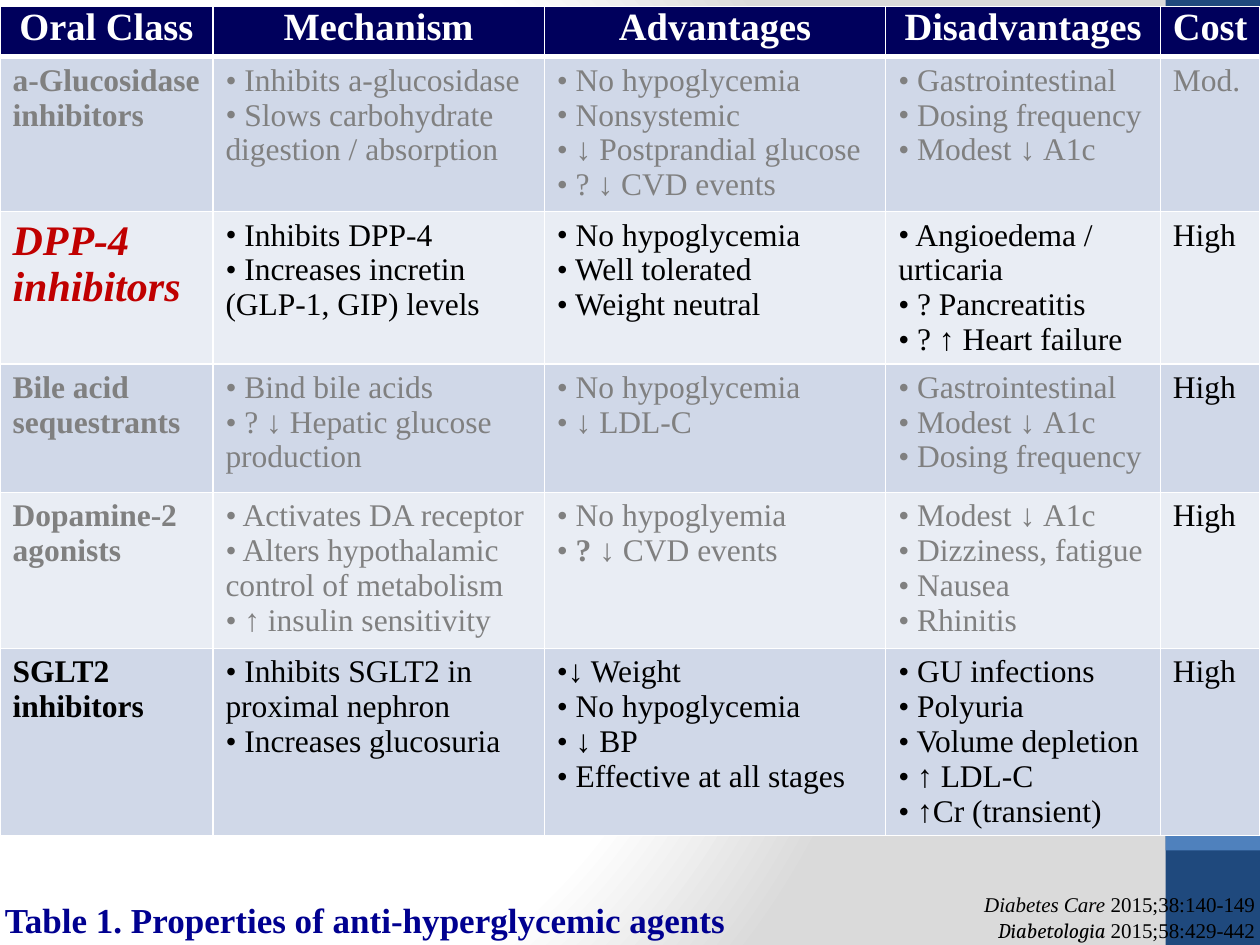
from pptx import Presentation
from pptx.dml.color import RGBColor
from pptx.enum.shapes import MSO_SHAPE as Shape
from pptx.enum.text import MSO_AUTO_SIZE as AutoSize, PP_ALIGN as Align
from pptx.oxml import parse_xml
from pptx.oxml.ns import nsdecls
from pptx.util import Inches, Pt

COLUMN_WIDTHS = [1.69, 2.63, 2.71, 2.18, 0.79]
ROW_HEIGHTS = [0.4, 1.23, 0.98, 1.02, 1.24, 1.28]
HEADINGS = ["Oral Class", "Mechanism", "Advantages", "Disadvantages", "Cost"]
GREY, BLACK, RED = "808080", "000000", "C00000"
DRUG_ROWS = [
    (GREY, GREY, [
        ["a-Glucosidase inhibitors"],
        [" Inhibits a-glucosidase", " Slows carbohydrate digestion / absorption"],
        [" No hypoglycemia", " Nonsystemic", " *↓* Postprandial glucose", " ? *↓ *CVD events"],
        [" Gastrointestinal", " Dosing frequency", " Modest *↓ *A1c"],
        ["Mod."]]),
    (BLACK, BLACK, [
        ["DPP-4", "inhibitors"],
        [" Inhibits DPP-4", " Increases incretin (GLP-1, GIP) levels"],
        [" No hypoglycemia", " Well tolerated", " Weight neutral"],
        [" Angioedema / urticaria", " ? Pancreatitis", " ? *↑ *Heart failure"],
        ["High"]]),
    (GREY, BLACK, [
        ["Bile acid sequestrants"],
        [" Bind bile acids", "* *? *↓ *Hepatic glucose production"],
        [" No hypoglycemia", " ↓ LDL-C"],
        [" Gastrointestinal", " Modest *↓ *A1c", " Dosing frequency"],
        ["High"]]),
    (GREY, BLACK, [
        ["Dopamine-2", "agonists"],
        [" Activates DA receptor", " Alters hypothalamic control of metabolism",
         " *↑ *insulin sensitivity"],
        [" No hypoglyemia", "* ? ↓ *CVD events"],
        [" Modest *↓ *A1c", " Dizziness, fatigue", " Nausea", " Rhinitis"],
        ["High"]]),
    (BLACK, BLACK, [
        ["SGLT2 inhibitors"],
        [" Inhibits SGLT2 in proximal nephron", " Increases glucosuria"],
        ["↓ Weight", " No hypoglycemia", " ↓ BP", " Effective at all stages"],
        [" GU infections", " Polyuria", " Volume depletion", " *↑ *LDL-C", "* ↑*Cr (transient)"],
        ["High"]]),
]


def rgb(value):
    """Turn a hex string into a colour."""
    return RGBColor.from_string(value)


class SlideBuilder:
    """Hold the style and the current slide."""

    font = "Times New Roman"
    bands = ["D0D8E8", "E9EDF4"]

    def __init__(self, page):
        """Keep the slide to draw on."""
        self.page = page

    def background(self):
        """Fill the slide with a circular white to grey gradient."""
        stops = "".join(
            f'<a:gs pos="{place}000"><a:srgbClr val="{color}"/></a:gs>'
            for place, color in [(0, "FFFFFF"), (75, "FFFFFF"), (100, "DADADA")])
        self.page.element.cSld.insert(0, parse_xml(
            f'<p:bg {nsdecls("p", "a")}><p:bgPr><a:gradFill rotWithShape="1">'
            f'<a:gsLst>{stops}</a:gsLst><a:path path="circle">'
            '<a:fillToRect l="20000" t="50000" r="100000" b="50000"/></a:path>'
            '</a:gradFill><a:effectLst/></p:bgPr></p:bg>'))

    def bar(self, top, height, color):
        """Add a plain block on the right edge."""
        box = self.page.shapes.add_shape(
            Shape.RECTANGLE, Inches(9.25), Inches(top), Inches(0.75), Inches(height))
        box.shadow.inherit = False
        box.fill.solid()
        box.fill.fore_color.rgb = rgb(color)
        box.line.fill.background()

    def span(self, para, text, size, color, bold=False, italic=False, font=None):
        """Add one formatted run."""
        span = para.add_run()
        span.text = text
        span.font.name = font or self.font
        span.font.size = Pt(size)
        span.font.color.rgb = rgb(color)
        span.font.bold = bold
        span.font.italic = italic

    def borders(self, cell, top, bottom):
        """Draw white cell borders with the given top and bottom widths."""
        for side, width in zip("LRTB", (1, 1, top, bottom)):
            cell._tc.get_or_add_tcPr().append(parse_xml(
                f'<a:ln{side} {nsdecls("a")} w="{Pt(width)}"><a:solidFill>'
                f'<a:srgbClr val="FFFFFF"/></a:solidFill></a:ln{side}>'))

    def cell(self, cell, fill, lines, size, color, bold=False, italic=False,
             align=None, bullet=False):
        """Fill a cell with lines; asterisks enclose bold parts."""
        cell.fill.solid()
        cell.fill.fore_color.rgb = rgb(fill)
        frame = cell.text_frame
        for index, line in enumerate(lines):
            para = frame.add_paragraph() if index else frame.paragraphs[0]
            para.alignment = align
            if bullet:
                props = para._p.get_or_add_pPr()
                props.append(parse_xml(f'<a:buFont {nsdecls("a")} typeface="{self.font}"/>'))
                props.append(parse_xml(f'<a:buChar {nsdecls("a")} char="•"/>'))
            for part, text in enumerate(line.split("*")):
                if text:
                    self.span(para, text, size, color, bold or part % 2 == 1, italic)

    def table(self):
        """Add the table of drug classes."""
        holder = self.page.shapes.add_table(
            len(ROW_HEIGHTS), len(COLUMN_WIDTHS), 0, Inches(0.05), Inches(10), Inches(6.92))
        table = holder.table
        for column, width in zip(table.columns, COLUMN_WIDTHS):
            column.width = Inches(width)
        for row, height in zip(table.rows, ROW_HEIGHTS):
            row.height = Inches(height)
        holder.height = Inches(6.92)
        for column, heading in enumerate(HEADINGS):
            cell = table.cell(0, column)
            cell.margin_left = cell.margin_right = cell.margin_top = cell.margin_bottom = 0
            self.borders(cell, 1, 3)
            self.cell(cell, "00005C", [heading], 22, "FFFFFF", bold=True, align=Align.CENTER)
        for row, (color, cost_color, entries) in enumerate(DRUG_ROWS, 1):
            fill = self.bands[(row - 1) % 2]
            for column, lines in enumerate(entries):
                cell = table.cell(row, column)
                self.borders(cell, 3 if row == 1 else 1, 1)
                if column == 0 and lines[0] == "DPP-4":
                    self.cell(cell, fill, lines, 24, RED, bold=True, italic=True)
                elif column == 0:
                    self.cell(cell, fill, lines, 18, color, bold=True)
                elif column == 4:
                    self.cell(cell, fill, lines, 18, cost_color)
                else:
                    self.cell(cell, fill, lines, 18, color, bullet=True)

    def text(self, left, top, width, height, wrap):
        """Add an empty text box and return its frame."""
        box = self.page.shapes.add_textbox(
            Inches(left), Inches(top), Inches(width), Inches(height))
        frame = box.text_frame
        frame.word_wrap = wrap
        frame.auto_size = AutoSize.SHAPE_TO_FIT_TEXT
        return frame

    def caption(self, text):
        """Add the table caption."""
        frame = self.text(-0.06, 7.08, 5.96, 0.44, False)
        self.span(frame.paragraphs[0], text, 20, "000090", bold=True)

    def references(self, entries):
        """Add the right-aligned journal references."""
        frame = self.text(3.74, 7.03, 6.32, 0.5, True)
        for index, (journal, issue, font) in enumerate(entries):
            para = frame.add_paragraph() if index else frame.paragraphs[0]
            para.alignment = Align.RIGHT
            self.span(para, journal, 12, BLACK, italic=True, font=font)
            self.span(para, issue, 12, BLACK)


def main():
    """Build and save the slide."""
    deck = Presentation()
    deck.slide_width, deck.slide_height = Inches(10), Inches(7.5)
    builder = SlideBuilder(deck.slides.add_slide(deck.slide_layouts[6]))
    builder.background()
    builder.bar(0, 7.5, "1F497D")
    builder.bar(6, 0.75, "4F81BD")
    builder.table()
    builder.caption("Table 1. Properties of anti-hyperglycemic agents")
    builder.references([
        ("Diabetes Care ", "2015;38:140-149", None),
        ("Diabetologia ", "2015;58:429-442", "Cambria"),
    ])
    deck.save("out.pptx")


if __name__ == "__main__":
    main()
